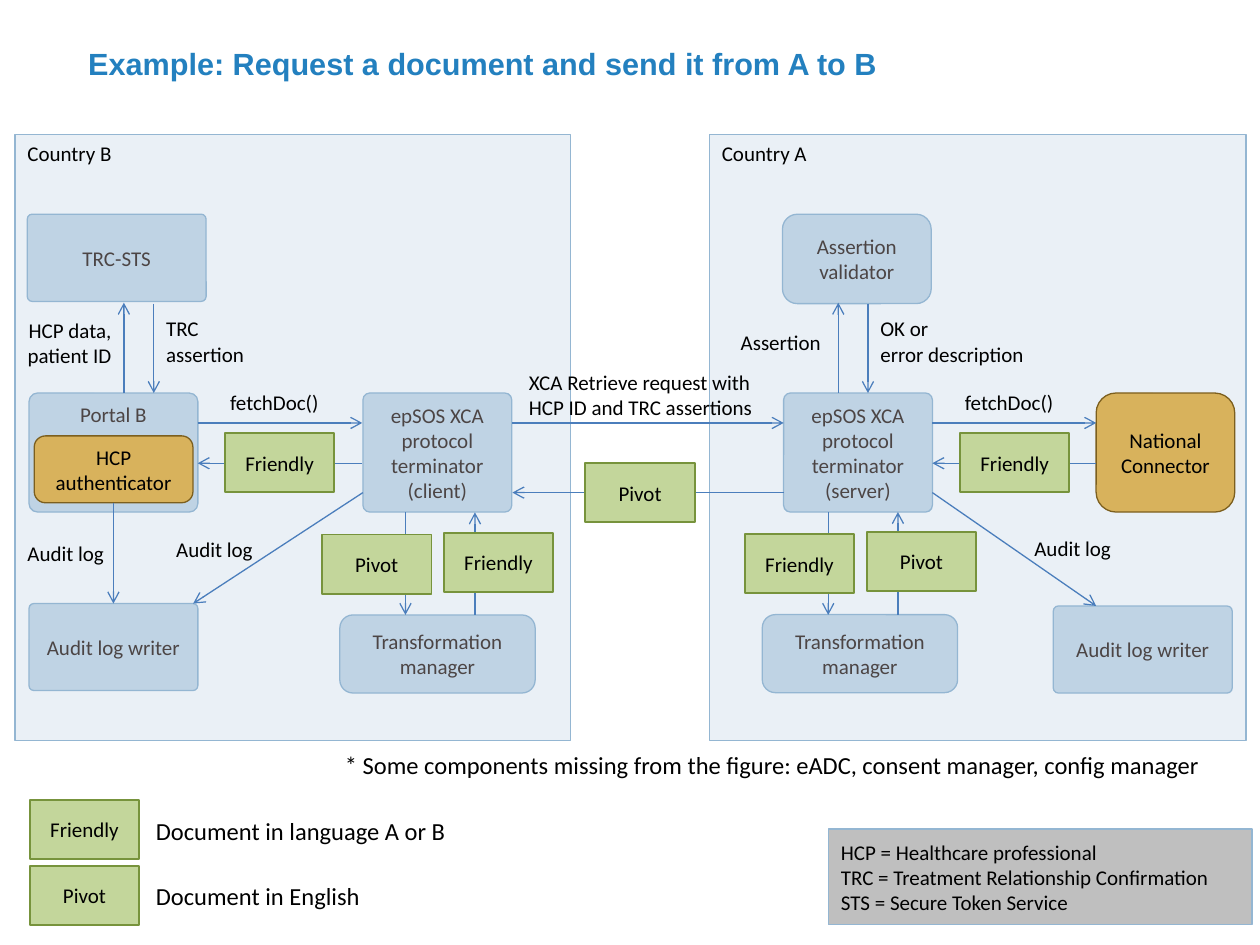
from dataclasses import dataclass

from lxml.etree import SubElement
from pptx import Presentation
from pptx.dml.color import RGBColor
from pptx.enum.shapes import MSO_CONNECTOR, MSO_SHAPE
from pptx.enum.text import MSO_ANCHOR, PP_ALIGN
from pptx.oxml.ns import qn
from pptx.util import Pt

BLACK, GREY_TEXT = "000000", "4C4545"
ARROW_BLUE, TITLE_BLUE = "4B7EBC", "2380BF"
SLIGHT, ROUND = 0.057, 0.167  # corner roundness
TAG_WIDTH, TAG_HEIGHT = 62.6, 33.8


@dataclass(frozen=True)
class Style:
    fill: str
    line: str
    text: str = BLACK
    weight: float = 0.75
    align: PP_ALIGN = PP_ALIGN.CENTER
    anchor: MSO_ANCHOR = MSO_ANCHOR.MIDDLE


PANEL = Style("EAF0F6", "94B6D2", align=PP_ALIGN.LEFT, anchor=MSO_ANCHOR.TOP)
COMPONENT = Style("BFD3E4", "94B6D2", GREY_TEXT)
PORTAL = Style("BFD3E4", "94B6D2", GREY_TEXT, anchor=MSO_ANCHOR.TOP)
NATIONAL = Style("D8B25C", "7C5F1E")
DOCUMENT = Style("C3D69B", "77933C", weight=1)
GLOSSARY = Style("BFBFBF", "94B6D2", align=PP_ALIGN.LEFT)


@dataclass(frozen=True)
class Node:
    text: str
    left: float
    top: float
    width: float
    height: float
    style: Style
    corner: float = 0


@dataclass(frozen=True)
class Label:
    text: str
    left: float
    top: float
    width: float
    size: float = 12
    align: PP_ALIGN = PP_ALIGN.LEFT
    wrap: bool = False


@dataclass(frozen=True)
class Arrow:
    x1: float
    y1: float
    x2: float
    y2: float


def color(value: str) -> RGBColor:
    return RGBColor.from_string(value)


def write(frame, text: str, size: float, ink: str, align: PP_ALIGN,
          name: str = "Calibri", bold: bool = False) -> None:
    """Write each line of the text as one paragraph."""
    for index, line in enumerate(text.split("\n")):
        para = frame.add_paragraph() if index else frame.paragraphs[0]
        para.alignment = align
        span = para.add_run()
        span.text = line
        span.font.name = name
        span.font.size = Pt(size)
        span.font.bold = bold
        span.font.color.rgb = color(ink)


def draw_node(page, node: Node) -> None:
    style = node.style
    kind = MSO_SHAPE.ROUNDED_RECTANGLE if node.corner else MSO_SHAPE.RECTANGLE
    box = page.shapes.add_shape(kind, Pt(node.left), Pt(node.top), Pt(node.width), Pt(node.height))
    if node.corner:
        box.adjustments[0] = node.corner
    box.shadow.inherit = False
    box.fill.solid()
    box.fill.fore_color.rgb = color(style.fill)
    box.line.color.rgb = color(style.line)
    box.line.width = Pt(style.weight)
    box.text_frame.word_wrap = True
    box.text_frame.vertical_anchor = style.anchor
    write(box.text_frame, node.text, 12, style.text, style.align)


def draw_tag(page, text: str, left: float, top: float) -> None:
    draw_node(page, Node(text, left, top, TAG_WIDTH, TAG_HEIGHT, DOCUMENT))


def draw_arrow(page, arrow: Arrow) -> None:
    line = page.shapes.add_connector(
        MSO_CONNECTOR.STRAIGHT, Pt(arrow.x1), Pt(arrow.y1), Pt(arrow.x2), Pt(arrow.y2))
    line.line.color.rgb = color(ARROW_BLUE)
    line.line.width = Pt(0.75)
    properties = line._element.spPr
    SubElement(properties.find(qn("a:ln")), qn("a:tailEnd"), type="arrow")
    SubElement(properties, qn("a:effectLst"))


def draw_label(page, label: Label) -> None:
    height = 7.2 + 1.2 * label.size * (label.text.count("\n") + 1)
    box = page.shapes.add_textbox(Pt(label.left), Pt(label.top), Pt(label.width), Pt(height))
    box.text_frame.word_wrap = label.wrap
    write(box.text_frame, label.text, label.size, BLACK, label.align)


NODES = [
    # Countries
    Node("Country A", 405.4, 77, 306.7, 346.3, PANEL),
    Node("Country B", 8.6, 77, 317.5, 346.3, PANEL),
    # Country B
    Node("TRC-STS", 15.6, 122.4, 102.2, 49.9, COMPONENT, SLIGHT),
    Node("Portal B", 16.6, 224.6, 96.5, 68, PORTAL, 0.072),
    Node("HCP authenticator", 19.6, 249.1, 90.7, 38.2, NATIONAL, ROUND),
    Node("epSOS XCA protocol terminator (client)", 207.4, 224.6, 85, 68, COMPONENT, SLIGHT),
    Node("Transformation manager", 194.2, 351.4, 111.6, 44.6, COMPONENT, ROUND),
    Node("Audit log writer", 16.6, 344.9, 96.5, 49.7, COMPONENT, SLIGHT),
    # Country A
    Node("Assertion validator", 447.1, 122.4, 85, 51.1, COMPONENT, ROUND),
    Node("epSOS XCA protocol terminator (server)", 447.8, 224.6, 85, 68, COMPONENT, SLIGHT),
    Node("National Connector", 626.4, 224.6, 79.2, 68, NATIONAL, ROUND),
    Node("Transformation manager", 435.6, 351.2, 111.6, 44.6, COMPONENT, ROUND),
    Node("Audit log writer", 601.9, 346.3, 102.2, 49.7, COMPONENT, SLIGHT),
    # Abbreviations
    Node("HCP = Healthcare professional\nTRC = Treatment Relationship Confirmation\n"
         "STS = Secure Token Service", 473.4, 473.8, 242, 54.7, GLOSSARY),
]

ARROWS = [
    # Portal with token service
    Arrow(70.8, 224.6, 70.8, 173), Arrow(87.9, 173.5, 87.9, 224.6),
    # Portal with client, client with server, server with connector
    Arrow(113, 241.7, 207, 241.7), Arrow(207, 264.7, 113, 264.7),
    Arrow(292.8, 241.7, 447.8, 241.7), Arrow(447.8, 281.5, 292.8, 281.5),
    Arrow(532.8, 241.7, 626.4, 241.7), Arrow(626.4, 264.7, 532.8, 264.7),
    # Server with assertion validator
    Arrow(479, 224.6, 479, 173), Arrow(496, 173.5, 496, 224.6),
    # Terminators with transformation managers
    Arrow(231.7, 292.8, 231.7, 351.4), Arrow(271.4, 351.4, 271.4, 292.8),
    Arrow(473.3, 292.6, 473.3, 351.4), Arrow(513.1, 351.4, 513.1, 292.6),
    # Audit logging
    Arrow(64.8, 287.3, 64.8, 344.9), Arrow(207.4, 281.5, 110.4, 344.9),
    Arrow(532.8, 281.5, 626.4, 346.3),
]

# Document tags: text, left, top
TAGS = [
    ("Friendly", 128.5, 247.5), ("Pivot", 184, 305.5), ("Friendly", 253.6, 304.4),
    ("Pivot", 334.5, 264.7), ("Friendly", 425.6, 305.2), ("Pivot", 495.3, 304),
    ("Friendly", 548.5, 247.5), ("Friendly", 17, 457.2), ("Pivot", 17, 494.8),
]

LABELS = [
    Label("HCP data, patient ID", 0, 177.8, 70.8, align=PP_ALIGN.RIGHT, wrap=True),
    Label("TRC\nassertion", 87.8, 177, 61.2),
    Label("fetchDoc()", 124.4, 219, 69.8),
    Label("XCA Retrieve request with\nHCP ID and TRC assertions", 295.2, 207.7, 151.2),
    Label("Assertion", 416.2, 184.7, 62.6),
    Label("OK or\nerror description", 496, 177, 100),
    Label("fetchDoc()", 544.3, 219, 69.8),
    Label("Audit log", 8.6, 305.5, 61.2),
    Label("Audit log", 93.6, 303, 61.2),
    Label("Audit log", 584, 302.4, 61.2),
    Label("* Some components missing from the figure: eADC, consent manager, config manager",
          190, 425.2, 523.4, 14),
    Label("Document in language A or B", 82, 463, 188, 14),
    Label("Document in English", 82, 499.7, 136.8, 14),
]


def main() -> None:
    deck = Presentation()
    deck.slide_width, deck.slide_height = Pt(720), Pt(540)
    page = deck.slides.add_slide(deck.slide_layouts[5])

    # Title
    title = page.shapes.title
    title.left, title.top, title.width, title.height = Pt(19.4), Pt(15.1), Pt(513.4), Pt(45.4)
    title.text_frame.vertical_anchor = MSO_ANCHOR.MIDDLE
    write(title.text_frame, "Example: Request a document and send it from A to B",
          17.5, TITLE_BLUE, PP_ALIGN.CENTER, "Arial", True)
    title.text_frame.paragraphs[0].line_spacing = 0.8

    # Diagram, from back to front
    for node in NODES:
        draw_node(page, node)
    for arrow in ARROWS:
        draw_arrow(page, arrow)
    for tag in TAGS:
        draw_tag(page, *tag)
    for label in LABELS:
        draw_label(page, label)

    deck.save("out.pptx")


if __name__ == "__main__":
    main()
